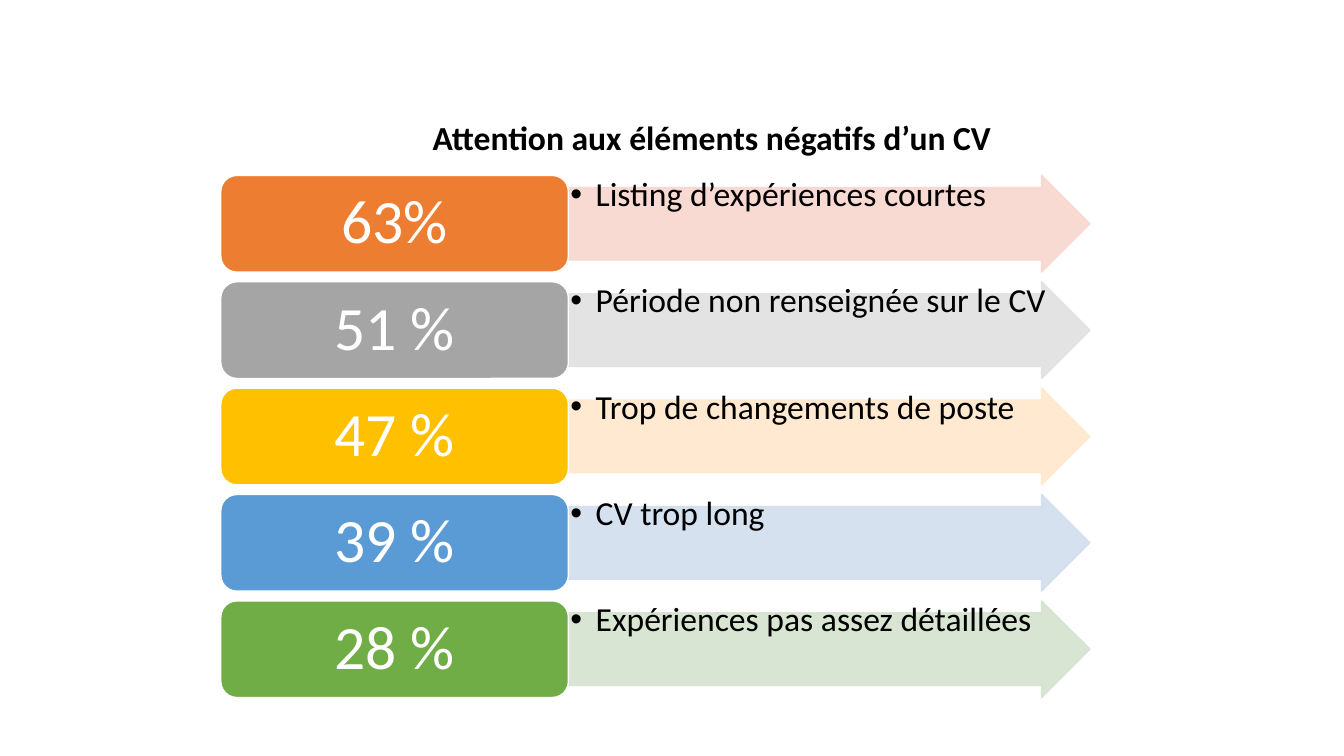
from lxml import etree
from pptx import Presentation
from pptx.dml.color import RGBColor
from pptx.enum.shapes import MSO_SHAPE
from pptx.enum.text import MSO_ANCHOR, PP_ALIGN
from pptx.oxml.ns import qn
from pptx.util import Inches, Pt

ARROW = MSO_SHAPE.RIGHT_ARROW
CARD = MSO_SHAPE.ROUNDED_RECTANGLE
TOP, MIDDLE, BOTTOM = MSO_ANCHOR.TOP, MSO_ANCHOR.MIDDLE, MSO_ANCHOR.BOTTOM
LEFT, CENTER = PP_ALIGN.LEFT, PP_ALIGN.CENTER

FONT = "Calibri"
COLORS = {
    "text": "000000", "white": "FFFFFF",
    "orange": "ED7D31", "pale_orange": "F8D7CE",
    "gray": "A5A5A5", "pale_gray": "E1E1E1",
    "gold": "FFC000", "pale_gold": "FFE8CC",
    "blue": "5B9BD5", "pale_blue": "D2DEEF",
    "green": "70AD47", "pale_green": "D5E3CF",
}
FLAWS = [
    ("63%", "Listing d’expériences courtes", "orange"),
    ("51 %", "Période non renseignée sur le CV", "gray"),
    ("47 %", "Trop de changements de poste", "gold"),
    ("39 %", "CV trop long", "blue"),
    ("28 %", "Expériences pas assez détaillées", "green"),
]
TITLE_BOX = (1.7, 0.73, 10.72, 0.88)
CHART_BOX = (2.19, 1.74, 8.62, 5.18)
CARD_SHARE = 0.4
GAP_SHARE = 0.1
ARROW_OPACITY = 90


def color(name):
    return RGBColor.from_string(COLORS[name])


def write_text(shape, text, size, color_name, align, anchor, insets, bold=False):
    frame = shape.text_frame
    frame.word_wrap = True
    frame.vertical_anchor = anchor
    frame.margin_left = frame.margin_right = Inches(insets[0])
    frame.margin_top = frame.margin_bottom = Inches(insets[1])
    paragraph = frame.paragraphs[0]
    paragraph.text = text
    paragraph.alignment = align
    paragraph.line_spacing = 0.9
    paragraph.font.name = FONT
    paragraph.font.size = Pt(size)
    paragraph.font.bold = bold
    paragraph.font.color.rgb = color(color_name)
    return paragraph


def add_bullet(paragraph, indent):
    properties = paragraph._p.get_or_add_pPr()
    properties.set("marL", str(Inches(indent)))
    properties.set("indent", str(-Inches(indent)))
    bullet_font = etree.SubElement(properties, qn("a:buFont"))
    bullet_font.set("typeface", "Arial")
    bullet = etree.SubElement(properties, qn("a:buChar"))
    bullet.set("char", "•")
    properties.append(properties.find(qn("a:defRPr")))


def add_panel(slide, kind, box, fill_name, line_name):
    shape = slide.shapes.add_shape(kind, *map(Inches, box))
    shape.shadow.inherit = False
    shape.fill.solid()
    shape.fill.fore_color.rgb = color(fill_name)
    shape.line.color.rgb = color(line_name)
    shape.line.width = Pt(1)
    return shape


def set_opacity(shape, percent):
    for fill_color in shape._element.spPr.iter(qn("a:srgbClr")):
        alpha = etree.SubElement(fill_color, qn("a:alpha"))
        alpha.set("val", str(percent * 1000))


def add_title(slide, box):
    title = slide.shapes.add_textbox(*map(Inches, box))
    write_text(title, "Attention aux éléments négatifs d’un CV", 24, "text",
               CENTER, BOTTOM, (0.1, 0.05), bold=True)


def add_flaw(slide, box, percentage, label, hue):
    left, top, width, height = box
    card_width = width * CARD_SHARE
    arrow_box = (left + card_width, top, width - card_width, height)

    arrow = add_panel(slide, ARROW, arrow_box, f"pale_{hue}", f"pale_{hue}")
    arrow.adjustments[0] = 0.75
    arrow.adjustments[1] = 0.5
    set_opacity(arrow, ARROW_OPACITY)

    caption = slide.shapes.add_textbox(*map(Inches, arrow_box))
    paragraph = write_text(caption, label, 24, "text", LEFT, TOP, (0.02, 0.02))
    add_bullet(paragraph, 0.25)

    card = add_panel(slide, CARD, (left, top, card_width, height), hue, "white")
    write_text(card, percentage, 44, "white", CENTER, MIDDLE, (0.18, 0.09))


def add_flaw_list(slide, box):
    left, top, width, height = box
    row_height = height / (len(FLAWS) + GAP_SHARE * (len(FLAWS) - 1))
    pitch = row_height * (1 + GAP_SHARE)
    for index, flaw in enumerate(FLAWS):
        add_flaw(slide, (left, top + index * pitch, width, row_height), *flaw)


def main():
    presentation = Presentation()
    presentation.slide_width = Inches(13.33)
    presentation.slide_height = Inches(7.5)
    slide = presentation.slides.add_slide(presentation.slide_layouts[6])
    add_title(slide, TITLE_BOX)
    add_flaw_list(slide, CHART_BOX)
    presentation.save("out.pptx")


if __name__ == "__main__":
    main()
